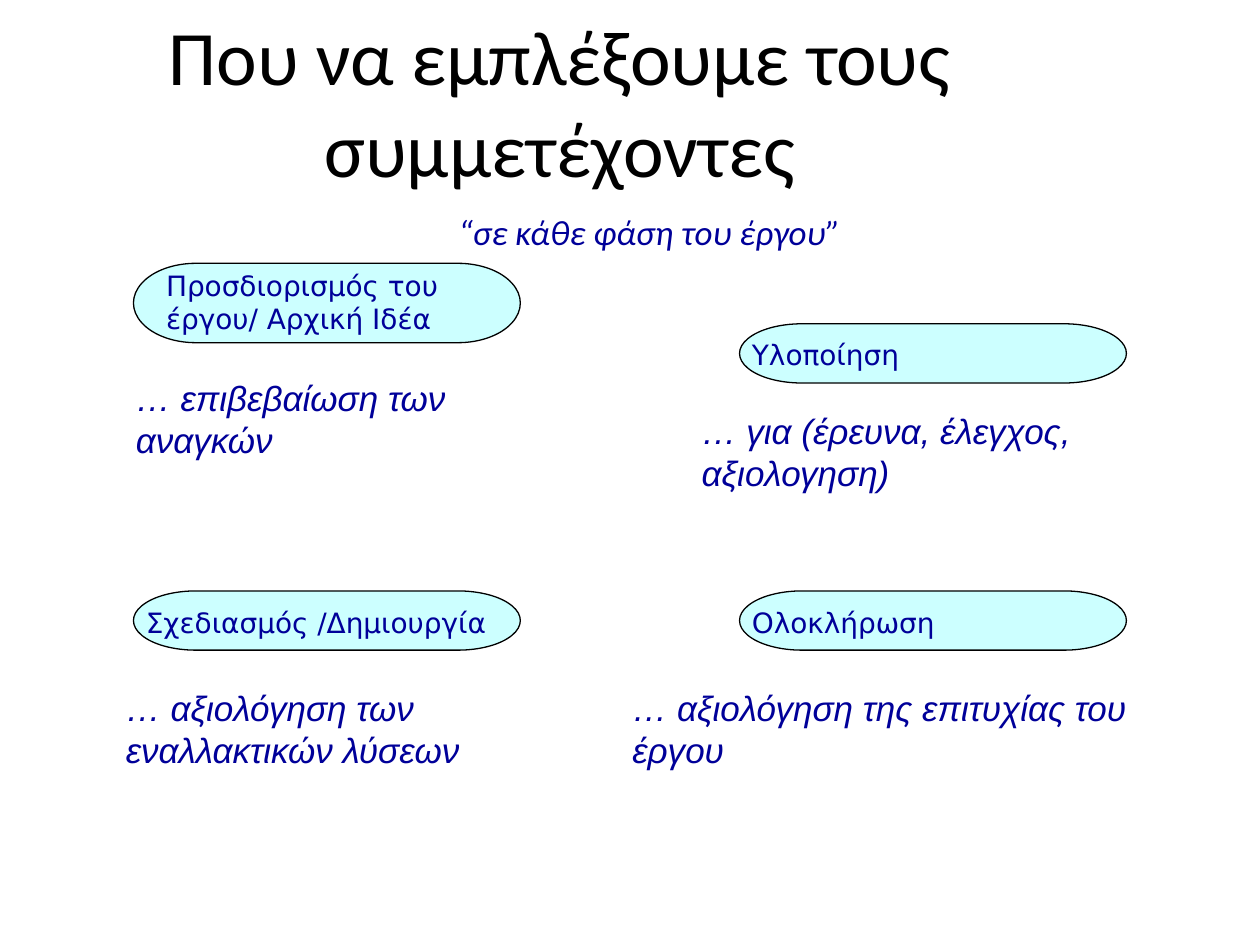
"""Build a slide on involving participants in each phase of a project."""
import pptx
import pptx.dml.color
import pptx.enum.shapes
import pptx.enum.text
import pptx.oxml.ns
import pptx.util
import lxml.etree

NAVY = pptx.dml.color.RGBColor(0x00, 0x00, 0x99)
BLACK = pptx.dml.color.RGBColor(0x00, 0x00, 0x00)
CYAN = pptx.dml.color.RGBColor(0xCC, 0xFF, 0xFF)
CENTER = pptx.enum.text.PP_ALIGN.CENTER
LEFT = pptx.enum.text.PP_ALIGN.LEFT
FIT = pptx.enum.text.MSO_AUTO_SIZE.SHAPE_TO_FIT_TEXT
FIXED = pptx.enum.text.MSO_AUTO_SIZE.NONE
TOP = pptx.enum.text.MSO_ANCHOR.TOP
MIDDLE = pptx.enum.text.MSO_ANCHOR.MIDDLE
PILL = pptx.enum.shapes.MSO_SHAPE.FLOWCHART_TERMINATOR

deck = pptx.Presentation()
deck.slide_width = pptx.util.Inches(10)
deck.slide_height = pptx.util.Inches(7.5)
CELL = deck.slide_width / 100
slide = deck.slides.add_slide(deck.slide_layouts[1])


def grid(*cells):
    return [round(cell * CELL) for cell in cells]


def write(shape, text, font="Arial", size=20, color=NAVY, italic=False,
          align=LEFT, anchor=TOP, fit=FIT, space=1.0):
    frame = shape.text_frame
    frame.word_wrap = True
    frame.auto_size = fit
    frame.vertical_anchor = anchor
    para = frame.paragraphs[0]
    para.text = text
    props = para._p.get_or_add_pPr()
    props.set("marL", "0")
    props.set("indent", "0")
    lxml.etree.SubElement(props, pptx.oxml.ns.qn("a:buNone"))
    para.alignment = align
    para.line_spacing = space
    para.space_before = pptx.util.Pt(0)
    para.font.name = font
    para.font.size = pptx.util.Pt(size)
    para.font.italic = italic
    para.font.color.rgb = color


title = slide.shapes.title
title.left, title.top, title.width, title.height = grid(0.9, 3.3, 87.1, 9.4)
write(title, "Που να εμπλέξουμε τους συμμετέχοντες", font="Calibri", size=44,
      color=BLACK, align=CENTER, anchor=MIDDLE, fit=FIXED)

motto = slide.placeholders[1]
motto.left, motto.top, motto.width, motto.height = grid(9, 15.5, 85.1, 5.5)
write(motto, "“σε κάθε φάση του έργου”", font="Calibri", italic=True,
      align=CENTER, fit=FIXED, space=1.2)

WIDE = 30.7
COLS = (10.6, 58.7)
ROW = 46.9
phases = [
    (COLS[0], 20.9, 6.3, "Προσδιορισμός του έργου/ Αρχική Ιδέα",
     (12.2, 20.8, WIDE, 8.5), "… επιβεβαίωση των αναγκών", (9.8, 29.4, 34.6, 7.7)),
    (COLS[0], ROW, 4.7, "Σχεδιασμός /Δημιουργία",
     (COLS[0], 47.6, WIDE, 3.7), "… αξιολόγηση των εναλλακτικών λύσεων", (9, 54, 37.8, 7.7)),
    (COLS[1], 25.7, 4.7, "Υλοποίηση",
     (COLS[1], 26.3, WIDE, 3.7), "… για (έρευνα, έλεγχος, αξιολογηση)", (54.7, 32, 37.8, 7.7)),
    (COLS[1], ROW, 4.7, "Ολοκλήρωση",
     (COLS[1], 47.6, WIDE, 3.7), "… αξιολόγηση της επιτυχίας του έργου", (49.2, 54, 48, 7.7)),
]

for left, top, high, name, spot, note, place in phases:
    group = slide.shapes.add_group_shape()
    pill = group.shapes.add_shape(PILL, *grid(left, top, WIDE, high))
    pill.shadow.inherit = False
    pill.fill.solid()
    pill.fill.fore_color.rgb = CYAN
    pill.line.color.rgb = BLACK
    pill.line.width = pptx.util.Pt(0.75)
    write(group.shapes.add_textbox(*grid(*spot)), name, font="DejaVu Sans", size=16)
    write(group.shapes.add_textbox(*grid(*place)), note, italic=True)

deck.save("out.pptx")
